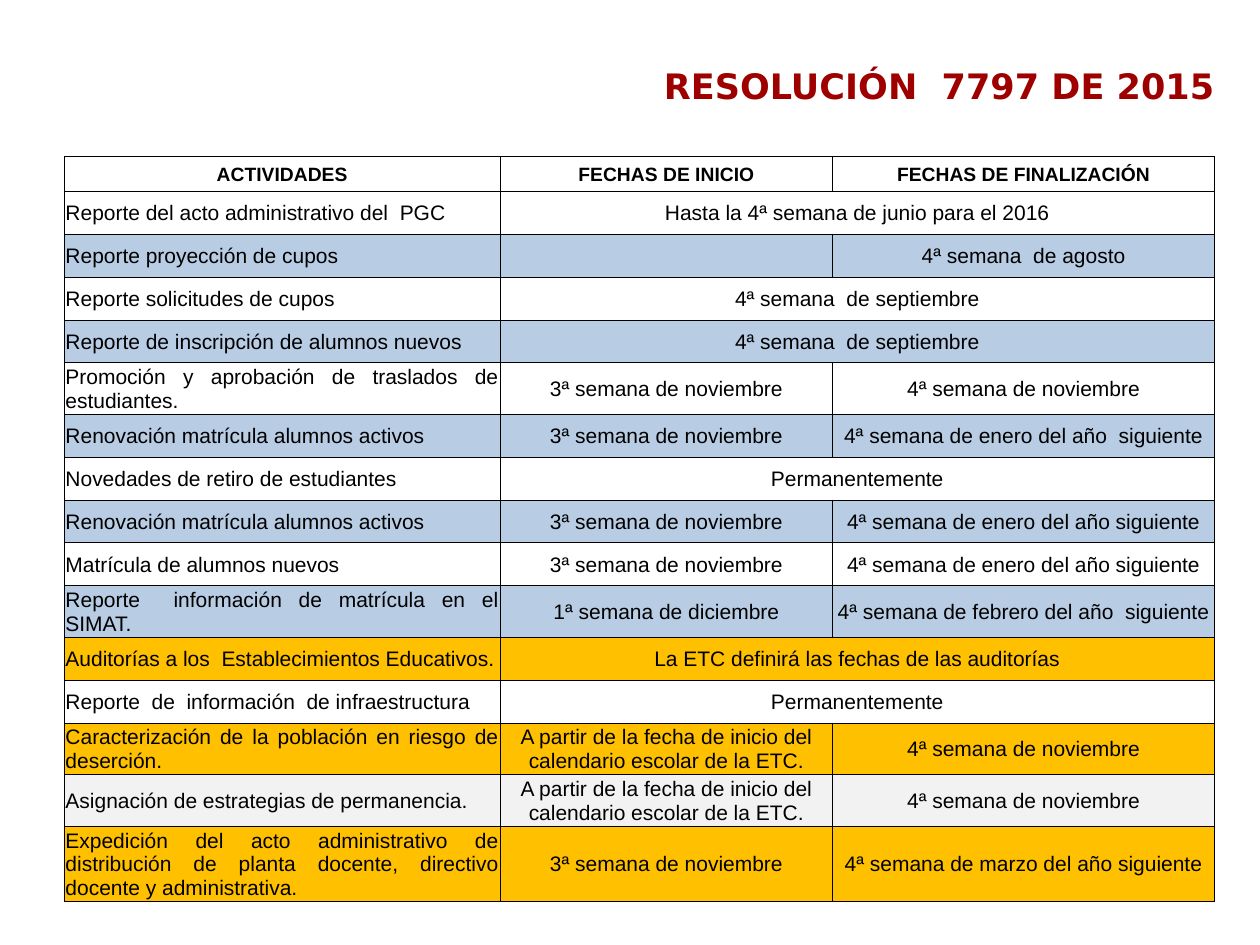
from dataclasses import dataclass
from typing import Optional

from lxml import etree
from pptx import Presentation
from pptx.dml.color import RGBColor
from pptx.enum.text import MSO_ANCHOR, PP_ALIGN
from pptx.oxml.ns import qn
from pptx.util import Inches, Pt

LEFT, CENTER, RIGHT, JUSTIFY = PP_ALIGN.LEFT, PP_ALIGN.CENTER, PP_ALIGN.RIGHT, PP_ALIGN.JUSTIFY
MIDDLE = MSO_ANCHOR.MIDDLE

BLACK, WHITE, DARK_RED = "000000", "FFFFFF", "9E0000"
BLUE, GOLD, GRAY = "B8CCE4", "FFC000", "F2F2F2"

COLUMN_WIDTHS = (3.46, 2.64, 3.03)
HEADER_HEIGHT, ONE_LINE, TWO_LINES, THREE_LINES = 0.28, 0.34, 0.41, 0.6


@dataclass
class Activity:
    """A table row; without an end date, the start text spans both date columns."""
    name: str
    start: str
    end: Optional[str] = None
    fill: str = WHITE
    height: float = ONE_LINE
    name_alignment: PP_ALIGN = JUSTIFY
    size: int = 12
    bold: bool = False


SCHOOL_START = "A partir de la fecha de inicio del calendario escolar de la ETC."
NOVEMBER_3 = "3ª semana de noviembre"
SEPTEMBER_4 = "4ª semana  de septiembre"
JANUARY_4 = "4ª semana de enero del año siguiente"

ACTIVITIES = (
    Activity("ACTIVIDADES", "FECHAS DE INICIO", "FECHAS DE FINALIZACIÓN",
             height=HEADER_HEIGHT, name_alignment=CENTER, size=11, bold=True),
    Activity("Reporte del acto administrativo del  PGC",
             "Hasta la 4ª semana de junio para el 2016", name_alignment=LEFT),
    Activity("Reporte proyección de cupos", "", "4ª semana  de agosto", BLUE),
    Activity("Reporte solicitudes de cupos", SEPTEMBER_4),
    Activity("Reporte de inscripción de alumnos nuevos", SEPTEMBER_4, fill=BLUE),
    Activity("Promoción y aprobación de traslados de estudiantes.",
             NOVEMBER_3, "4ª semana de noviembre", height=TWO_LINES),
    Activity("Renovación matrícula alumnos activos", NOVEMBER_3,
             "4ª semana de enero del año  siguiente", BLUE),
    Activity("Novedades de retiro de estudiantes", "Permanentemente"),
    Activity("Renovación matrícula alumnos activos", NOVEMBER_3, JANUARY_4, BLUE),
    Activity("Matrícula de alumnos nuevos", NOVEMBER_3, JANUARY_4),
    Activity("Reporte  información de matrícula en el SIMAT.", "1ª semana de diciembre",
             "4ª semana de febrero del año  siguiente", BLUE, TWO_LINES),
    Activity("Auditorías a los  Establecimientos Educativos.",
             "La ETC definirá las fechas de las auditorías", fill=GOLD),
    Activity("Reporte  de  información  de infraestructura", "Permanentemente"),
    Activity("Caracterización de la población en riesgo de deserción.",
             SCHOOL_START, "4ª semana de noviembre", GOLD, TWO_LINES),
    Activity("Asignación de estrategias de permanencia.",
             SCHOOL_START, "4ª semana de noviembre", GRAY, TWO_LINES),
    Activity("Expedición del acto administrativo de distribución de planta docente, "
             "directivo docente y administrativa.",
             NOVEMBER_3, "4ª semana de marzo del año siguiente", GOLD, THREE_LINES),
)


def color(hex_value: str) -> RGBColor:
    return RGBColor.from_string(hex_value)


def format_paragraph(paragraph, alignment: PP_ALIGN, font_name: str, size: int,
                     font_color: str, bold: bool) -> None:
    paragraph.alignment = alignment
    font = paragraph.font
    font.name, font.size, font.bold = font_name, Pt(size), bold
    font.color.rgb = color(font_color)


def add_borders(cell) -> None:
    """Put thin black lines before the fill, as the schema orders them."""
    properties = cell._tc.get_or_add_tcPr()
    for index, side in enumerate(("lnL", "lnR", "lnT", "lnB")):
        line = etree.Element(qn(f"a:{side}"), w=str(Pt(0.5)))
        fill = etree.SubElement(line, qn("a:solidFill"))
        etree.SubElement(fill, qn("a:srgbClr"), val=BLACK)
        properties.insert(index, line)


def fill_cell(cell, text: str, alignment: PP_ALIGN, activity: Activity) -> None:
    cell.text = text
    cell.vertical_anchor = MIDDLE
    cell.margin_left = cell.margin_right = cell.margin_top = Inches(0.01)
    cell.margin_bottom = 0
    cell.fill.solid()
    cell.fill.fore_color.rgb = color(activity.fill)
    add_borders(cell)
    format_paragraph(cell.text_frame.paragraphs[0], alignment, "Arial",
                     activity.size, BLACK, activity.bold)


def add_title(slide) -> None:
    title = slide.shapes.title
    title.left, title.top = Inches(3.43), Inches(0.29)
    title.width, title.height = Inches(6.31), Inches(0.77)
    title.text_frame.text = "RESOLUCIÓN  7797 DE 2015"
    title.text_frame.vertical_anchor = MIDDLE
    format_paragraph(title.text_frame.paragraphs[0], RIGHT, "DejaVu Sans", 20, DARK_RED, True)


def add_schedule(slide) -> None:
    height = sum(activity.height for activity in ACTIVITIES)
    table = slide.shapes.add_table(
        len(ACTIVITIES), len(COLUMN_WIDTHS), Inches(0.51), Inches(1.24),
        Inches(sum(COLUMN_WIDTHS)), Inches(height)).table
    table.first_row = table.horz_banding = False
    for column, width in zip(table.columns, COLUMN_WIDTHS):
        column.width = Inches(width)
    for index, activity in enumerate(ACTIVITIES):
        table.rows[index].height = Inches(activity.height)
        name, start, end = table.rows[index].cells
        fill_cell(name, activity.name, activity.name_alignment, activity)
        fill_cell(start, activity.start, CENTER, activity)
        fill_cell(end, activity.end or "", CENTER, activity)
        if activity.end is None:
            start.merge(end)


def main() -> None:
    presentation = Presentation()
    presentation.slide_width, presentation.slide_height = Inches(10), Inches(7.5)
    slide = presentation.slides.add_slide(presentation.slide_layouts[5])
    add_title(slide)
    add_schedule(slide)
    presentation.save("out.pptx")


if __name__ == "__main__":
    main()
